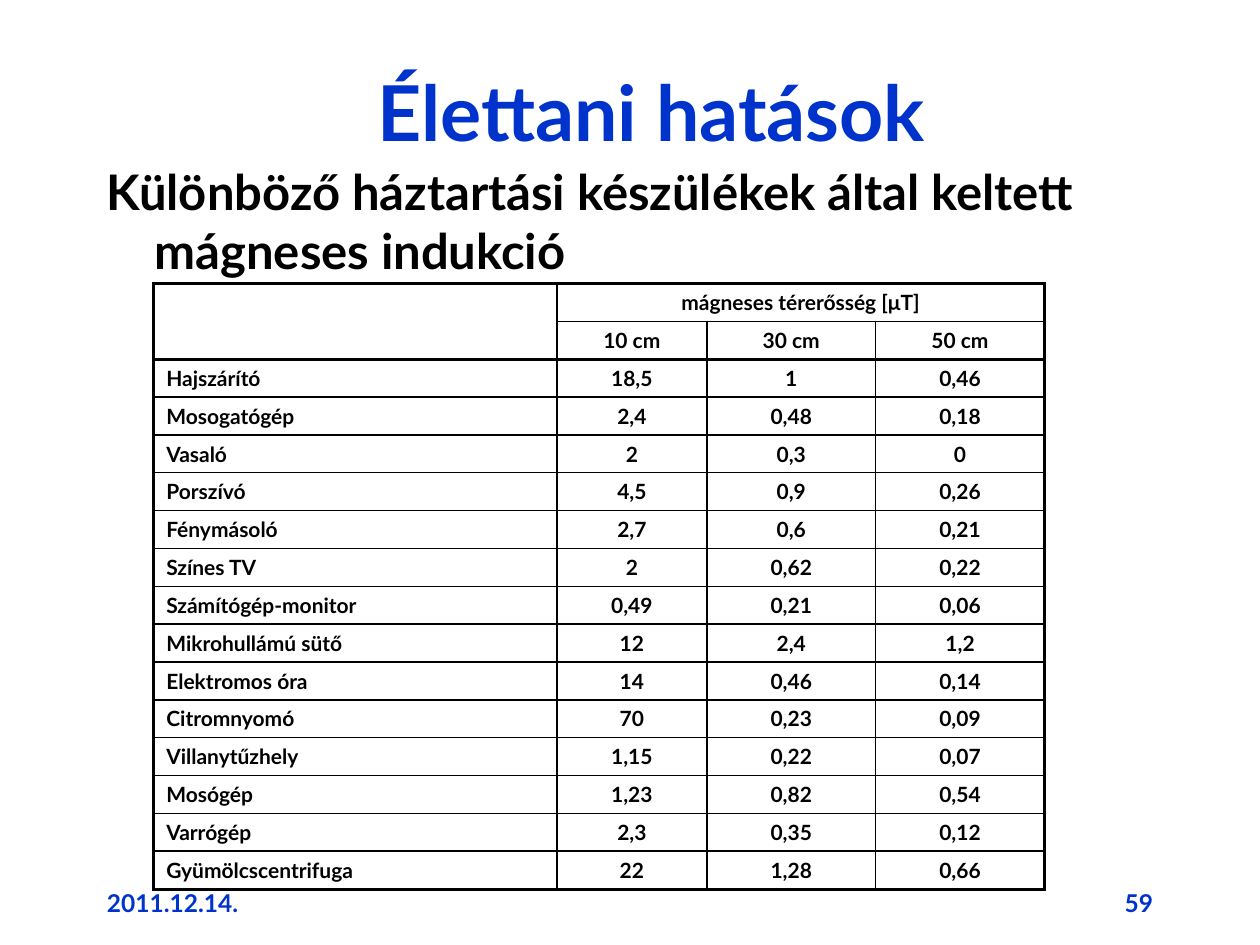
from lxml.etree import SubElement
from pptx import Presentation
from pptx.dml.color import RGBColor
from pptx.enum.text import MSO_ANCHOR, PP_ALIGN
from pptx.oxml.ns import qn
from pptx.util import Inches, Pt

COLORS = {"accent": "0033CC", "ink": "000000"}
FONT = "Lato"
THIN, THICK = 1, 2

DISTANCES = ["10 cm", "30 cm", "50 cm"]
APPLIANCES = [
    ("Hajszárító", "18,5", "1", "0,46"),
    ("Mosogatógép", "2,4", "0,48", "0,18"),
    ("Vasaló", "2", "0,3", "0"),
    ("Porszívó", "4,5", "0,9", "0,26"),
    ("Fénymásoló", "2,7", "0,6", "0,21"),
    ("Színes TV", "2", "0,62", "0,22"),
    ("Számítógép-monitor", "0,49", "0,21", "0,06"),
    ("Mikrohullámú sütő", "12", "2,4", "1,2"),
    ("Elektromos óra", "14", "0,46", "0,14"),
    ("Citromnyomó", "70", "0,23", "0,09"),
    ("Villanytűzhely", "1,15", "0,22", "0,07"),
    ("Mosógép", "1,23", "0,82", "0,54"),
    ("Varrógép", "2,3", "0,35", "0,12"),
    ("Gyümölcscentrifuga", "22", "1,28", "0,66"),
]
HEADER_ROWS = 2
COLUMN_WIDTHS = [3.2, 1.19, 1.34, 1.34]
ROW_HEIGHT = 0.3


def write(frame, text, size, color, align=PP_ALIGN.LEFT, hanging=False):
    paragraph = frame.paragraphs[0]
    paragraph.alignment = align
    if hanging:
        properties = paragraph._p.get_or_add_pPr()
        properties.set("marL", str(Inches(0.38)))
        properties.set("indent", str(Inches(-0.38)))
    run = paragraph.add_run()
    run.text = text
    run.font.name = FONT
    run.font.size = Pt(size)
    run.font.bold = True
    run.font.color.rgb = RGBColor.from_string(COLORS[color])


def add_title(slide, left, top, width, height):
    title = slide.shapes.title
    title.left, title.top = Inches(left), Inches(top)
    title.width, title.height = Inches(width), Inches(height)
    title.text_frame.vertical_anchor = MSO_ANCHOR.MIDDLE
    write(title.text_frame, "Élettani hatások", 44, "accent", PP_ALIGN.CENTER)


def add_text(slide, box, text, size, color, **style):
    frame = slide.shapes.add_textbox(*map(Inches, box)).text_frame
    frame.word_wrap = True
    write(frame, text, size, color, **style)


def add_footer(slide, left, top, width, height):
    block = 2.08
    add_text(slide, (left, top, block, height), "2011.12.14.", 14, "accent")
    add_text(slide, (left + width - block, top, block, height), "59", 14, "accent",
             align=PP_ALIGN.RIGHT)


def draw_border(cell, side, width):
    line = SubElement(cell._tc.get_or_add_tcPr(), qn(f"a:ln{side}"), w=str(Pt(width)))
    fill = SubElement(line, qn("a:solidFill"))
    SubElement(fill, qn("a:srgbClr"), val=COLORS["ink"])


def merged_area(row, column):
    """First row, first column, end row and end column of a cell's area."""
    if row < HEADER_ROWS and column == 0:
        return 0, 0, HEADER_ROWS, 1
    if row == 0:
        return 0, 1, 1, len(COLUMN_WIDTHS)
    return row, column, row + 1, column + 1


def style_cell(cell, row, column):
    top, left, bottom, right = merged_area(row, column)
    heavy_rows = (0, HEADER_ROWS, HEADER_ROWS + len(APPLIANCES))
    heavy_columns = (0, len(COLUMN_WIDTHS))
    edges = [
        ("L", left, column, heavy_columns),
        ("R", right, column + 1, heavy_columns),
        ("T", top, row, heavy_rows),
        ("B", bottom, row + 1, heavy_rows),
    ]
    for side, area_edge, cell_edge, heavy in edges:
        if not cell.is_spanned or area_edge == cell_edge:
            draw_border(cell, side, THICK if area_edge in heavy else THIN)
    cell.fill.background()
    cell.vertical_anchor = MSO_ANCHOR.MIDDLE


def add_induction_table(slide, left, top):
    rows = [["", "mágneses térerősség [μT]", "", ""], ["", *DISTANCES], *APPLIANCES]
    table = slide.shapes.add_table(
        len(rows), len(COLUMN_WIDTHS), Inches(left), Inches(top),
        Inches(sum(COLUMN_WIDTHS)), Inches(ROW_HEIGHT * len(rows))).table
    table.first_row = table.horz_banding = False
    for column, width in zip(table.columns, COLUMN_WIDTHS):
        column.width = Inches(width)
    for table_row in table.rows:
        table_row.height = Inches(ROW_HEIGHT)

    # Header spans
    table.cell(0, 0).merge(table.cell(HEADER_ROWS - 1, 0))
    table.cell(0, 1).merge(table.cell(0, len(COLUMN_WIDTHS) - 1))

    for r, values in enumerate(rows):
        for c, value in enumerate(values):
            cell = table.cell(r, c)
            style_cell(cell, r, c)
            if value:
                write(cell.text_frame, value, 12, "ink", hanging=True,
                      align=PP_ALIGN.CENTER if c else PP_ALIGN.LEFT)
            else:
                # Keeps empty cells from stretching their rows
                SubElement(cell.text_frame.paragraphs[0]._p, qn("a:endParaRPr"),
                           sz="1200")


def main():
    presentation = Presentation()
    presentation.slide_width, presentation.slide_height = Inches(10), Inches(7.5)
    slide = presentation.slides.add_slide(presentation.slide_layouts[5])

    add_footer(slide, 0.75, 7, 8.5, 0.5)
    add_title(slide, 0.92, 0.25, 8.5, 1.25)
    add_text(slide, (0.75, 1.23, 8.33, 0.75),
             "Különböző háztartási készülékek által keltett mágneses indukció",
             28, "ink", hanging=True)
    add_induction_table(slide, 1.22, 2.25)

    presentation.save("out.pptx")


if __name__ == "__main__":
    main()
